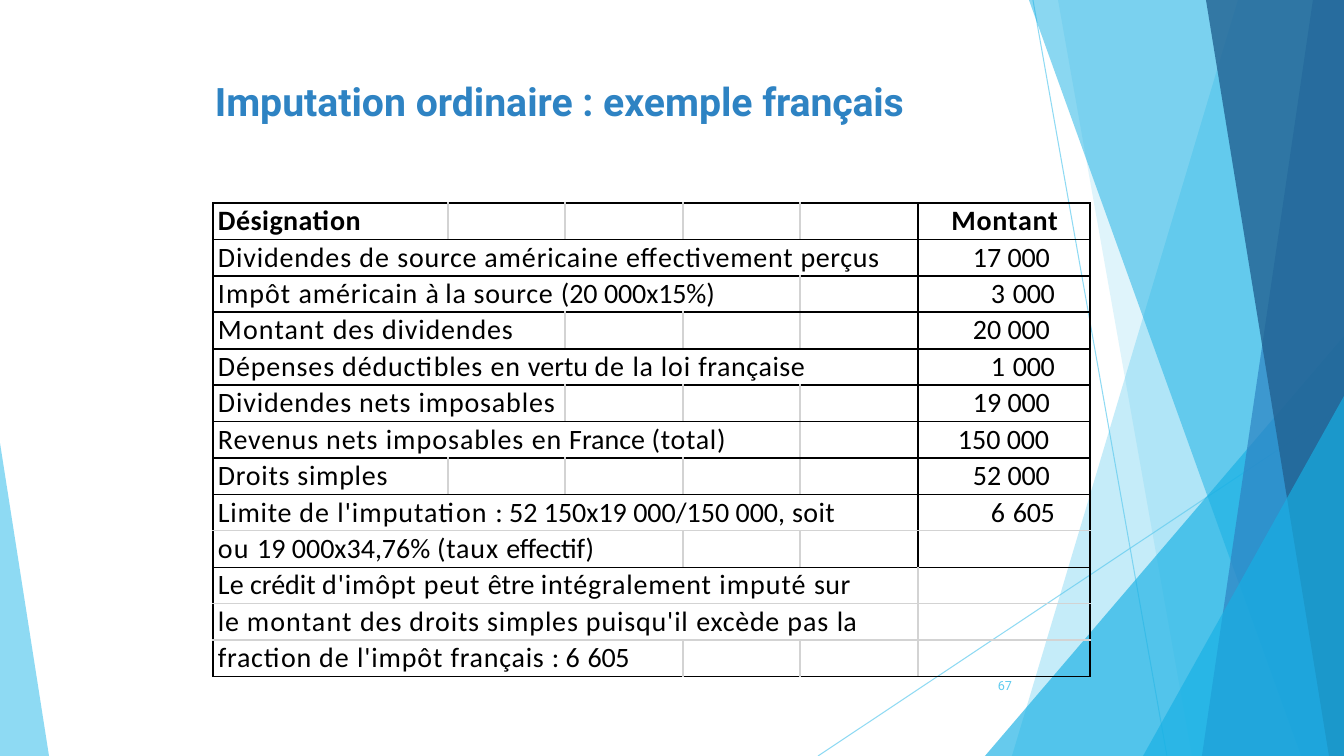
from lxml import etree
from pptx import Presentation
from pptx.dml.color import RGBColor
from pptx.enum.shapes import MSO_CONNECTOR, MSO_SHAPE
from pptx.enum.text import MSO_ANCHOR, PP_ALIGN
from pptx.oxml.ns import qn
from pptx.util import Pt

TRIANGLE = MSO_SHAPE.ISOSCELES_TRIANGLE
STRAIGHT = MSO_CONNECTOR.STRAIGHT
LEFT, RIGHT = PP_ALIGN.LEFT, PP_ALIGN.RIGHT
TOP, MIDDLE = MSO_ANCHOR.TOP, MSO_ANCHOR.MIDDLE

BLACK = RGBColor(0x00, 0x00, 0x00)
GREY = RGBColor(0xD3, 0xD3, 0xD3)
SKY = RGBColor(0x5F, 0xCB, 0xEF)
CYAN = RGBColor(0x17, 0xB0, 0xE4)
BLUE = RGBColor(0x2E, 0x83, 0xC3)
NAVY = RGBColor(0x22, 0x62, 0x92)

WIDTH, HEIGHT = 1344, 756
SCALE = 12192000 / WIDTH

TITLE_FONT = {"name": "Roboto", "size": Pt(28), "bold": True}
NUMBER_FONT = {"name": "Roboto", "size": Pt(9)}
CELL_FONT = {"name": "Calibri", "size": Pt(20), "bold": False}
HEAD_FONT = {**CELL_FONT, "bold": True}

COLUMNS = [235, 117, 118, 117, 118, 172]
RULES = [(BLACK, 1.5)] * 8 + [(BLACK, 1), (GREY, 1), (BLACK, 1),
                              (GREY, 1), (GREY, 1.5), (BLACK, 1)]
FIRST_GREY_ROW = 10
AMOUNT_INDENT = {2: 55, 3: 40}

ROWS = [
    (1, [("Désignation", 30)], "Montant"),
    (5, [("Dividendes ", 60), ("de ", 70), ("source ", 50), ("américaine ", 60),
         ("effectivement ", 50), ("perçus", 40)], "17 000"),
    (4, [("Impôt ", 70), ("américain ", 60), ("à ", 0), ("la source ", 50),
         ("(20 ", 0), ("000x15%)", -10)], "3 000"),
    (2, [("Montant ", 80), ("des dividendes", 60)], "20 000"),
    (5, [("Dépenses déductibles ", 60), ("en ", 50), ("vertu ", 0), ("de ", 70),
         ("la ", 50), ("loi ", 60), ("française", 40)], "1 000"),
    (2, [("Dividendes nets imposables", 60)], "19 000"),
    (4, [("Revenus nets ", 60), ("imposables ", 70), ("en ", 50), ("France ", 0),
         ("(total)", 50)], "150 000"),
    (1, [("Droits simples", 50)], "52 000"),
    (5, [("Limite ", 50), ("de l'imputation ", 70),
         (": 52 150x19 000/150 000, ", 0), ("soit", 30)], "6 605"),
    (3, [("ou ", 80), ("19 000x34,76% ", 0), ("(taux ", 60), ("effectif)", -10)], ""),
    (5, [("Le crédit ", 0), ("d'imôpt ", 60), ("peut ", 70), ("être ", 0),
         ("intégralement ", 60), ("imputé ", 70), ("sur", 30)], ""),
    (5, [("le ", 50), ("montant ", 80), ("des droits simples puisqu'il ", 60),
         ("excède ", 50), ("pas ", 70), ("la", 20)], ""),
    (3, [("fraction ", 50), ("de ", 70), ("l'impôt ", 60), ("français ", 50),
         (": ", 0), ("6 ", 50), ("605", -20)], ""),
]


def px(n):
    """Turn px into EMU."""
    return round(n * SCALE)


def set_alpha(fill, percent):
    """Make the solid colour in a fill element partly transparent."""
    clr = next(fill.iter(qn("a:srgbClr")))
    etree.SubElement(clr, qn("a:alpha")).set("val", str(percent * 1000))


def write(p, runs, font, color, align=LEFT, indent=0, right=0):
    """Write runs of text and letter spacing into a paragraph."""
    p.alignment = align
    p.space_before = Pt(0.6)
    pPr = p._p.get_or_add_pPr()
    for name, value in {"marL": indent, "marR": right, "indent": 0}.items():
        pPr.set(name, str(px(value)))
    for text, spacing in runs:
        r = p.add_run()
        r.text = text
        for name, value in font.items():
            setattr(r.font, name, value)
        r.font.color.rgb = color
        r._r.get_or_add_rPr().set("spc", str(spacing))


def text_box(slide, box, runs, font, color, align, anchor, insets):
    """Place a one-paragraph text box."""
    tf = slide.shapes.add_textbox(*map(px, box)).text_frame
    tf.word_wrap = True
    tf.vertical_anchor = anchor
    for side, inset in zip(("left", "top", "right", "bottom"), insets):
        setattr(tf, f"margin_{side}", px(inset))
    write(tf.paragraphs[0], runs, font, color, align)


def paint(sp, color, alpha):
    """Give a shape a transparent fill without line or shadow."""
    sp.shadow.inherit = False
    sp.fill.solid()
    sp.fill.fore_color.rgb = color
    sp.line.fill.background()
    set_alpha(sp._element.spPr, alpha)


def ray(slide, x1, y1, x2, y2):
    """Draw a thin decorative line."""
    s = slide.shapes.add_connector(STRAIGHT, px(x1), px(y1), px(x2), px(y2))
    s.line.color.rgb = SKY
    s.line.width = Pt(0.75)
    set_alpha(s._element.spPr, 70)
    etree.SubElement(s._element.spPr, qn("a:effectLst"))


def band(slide, top_x, bottom_x, color, alpha):
    """Draw a slanted band reaching the right edge of the slide."""
    fb = slide.shapes.build_freeform(px(top_x), 0)
    fb.add_line_segments([(px(x), px(y)) for x, y in (
        (WIDTH, 0), (WIDTH, HEIGHT), (bottom_x, HEIGHT))], close=True)
    paint(fb.convert_to_shape(), color, alpha)


def corner(slide, x, y, w, apex, color, alpha):
    """Draw a triangle standing on the bottom edge of the slide."""
    s = slide.shapes.add_shape(TRIANGLE, px(x), px(y), px(w), px(HEIGHT - y))
    s.adjustments[0] = apex
    paint(s, color, alpha)


def decoration(slide):
    """Draw the facets around the slide from back to front."""
    ray(slide, 1033, 0, 1167, HEIGHT)
    ray(slide, WIDTH, 406, 818, HEIGHT)
    band(slide, 1238, 1012, SKY, 36)
    band(slide, 1058, 1192, SKY, 20)
    corner(slide, 985, 336, 359, 1, CYAN, 66)
    band(slide, 1029, 1301, CYAN, 50)
    band(slide, 1313, 1202, BLUE, 70)
    band(slide, 1206, 1329, NAVY, 80)
    corner(slide, 1143, 396, 201, 1, CYAN, 66)
    corner(slide, 0, 443, 49, 0, SKY, 70)


def border(cell, side, color, width):
    """Draw one border of a cell."""
    ln = etree.SubElement(cell._tc.get_or_add_tcPr(), qn(f"a:ln{side}"), w=str(Pt(width)))
    fill = etree.SubElement(ln, qn("a:solidFill"))
    etree.SubElement(fill, qn("a:srgbClr"), val=str(color))


def edge_color(row, edge):
    """Return the colour of a vertical rule."""
    solid = edge in (0, 6) or (edge == 5 and row < FIRST_GREY_ROW)
    return BLACK if solid else GREY


def write_amount(p, amount):
    """Write the amount of a row in its column."""
    if amount == "Montant":
        write(p, [(amount, 50)], HEAD_FONT, BLACK, RIGHT, right=32)
    elif amount:
        lead, tail = amount.split()
        short = len(lead) == 1
        runs = [(lead + " ", 50 if short else 0), (tail, -20)]
        if short:
            write(p, runs, CELL_FONT, BLACK, RIGHT, right=35)
        else:
            write(p, runs, CELL_FONT, BLACK, indent=AMOUNT_INDENT[len(lead)])


def tax_table(slide, x, y, w, h):
    """Build the table of designations and amounts."""
    table = slide.shapes.add_table(len(ROWS), len(COLUMNS), px(x), px(y), px(w), px(h)).table
    table.first_row = table.horz_banding = False
    for col, width in zip(table.columns, COLUMNS):
        col.width = px(width)
    for i, (span, runs, amount) in enumerate(ROWS):
        table.rows[i].height = px(h) // len(ROWS)
        if span > 1:
            table.cell(i, 0).merge(table.cell(i, span - 1))
        for j in range(len(COLUMNS)):
            cell = table.cell(i, j)
            end = span if j == 0 else j + 1
            if not cell.is_spanned:
                border(cell, "L", edge_color(i, j), 1.5)
                border(cell, "R", edge_color(i, end), 1.5)
            border(cell, "T", *RULES[i])
            border(cell, "B", *RULES[i + 1])
            cell.fill.background()
            for side, inset in {"left": 0, "top": 1, "right": 0, "bottom": 0}.items():
                setattr(cell, f"margin_{side}", px(inset))
        font = CELL_FONT if i else HEAD_FONT
        write(table.cell(i, 0).text_frame.paragraphs[0], runs, font, BLACK, indent=5)
        write_amount(table.cell(i, 5).text_frame.paragraphs[0], amount)


def main():
    """Build and save the slide."""
    prs = Presentation()
    prs.slide_width, prs.slide_height = px(WIDTH), px(HEIGHT)
    slide = prs.slides.add_slide(prs.slide_layouts[6])
    decoration(slide)
    text_box(slide, (214, 76, 751, 49),
             [("Imputation ordinaire : exemple ", 0), ("français", -10)],
             TITLE_FONT, BLUE, LEFT, TOP, (1, 1, 0, 0))
    tax_table(slide, 213, 203, sum(COLUMNS), 474)
    text_box(slide, (947, 666, 75, 40), [("67", 0)],
             NUMBER_FONT, SKY, RIGHT, MIDDLE, (10, 5, 10, 5))
    prs.save("out.pptx")


if __name__ == "__main__":
    main()
